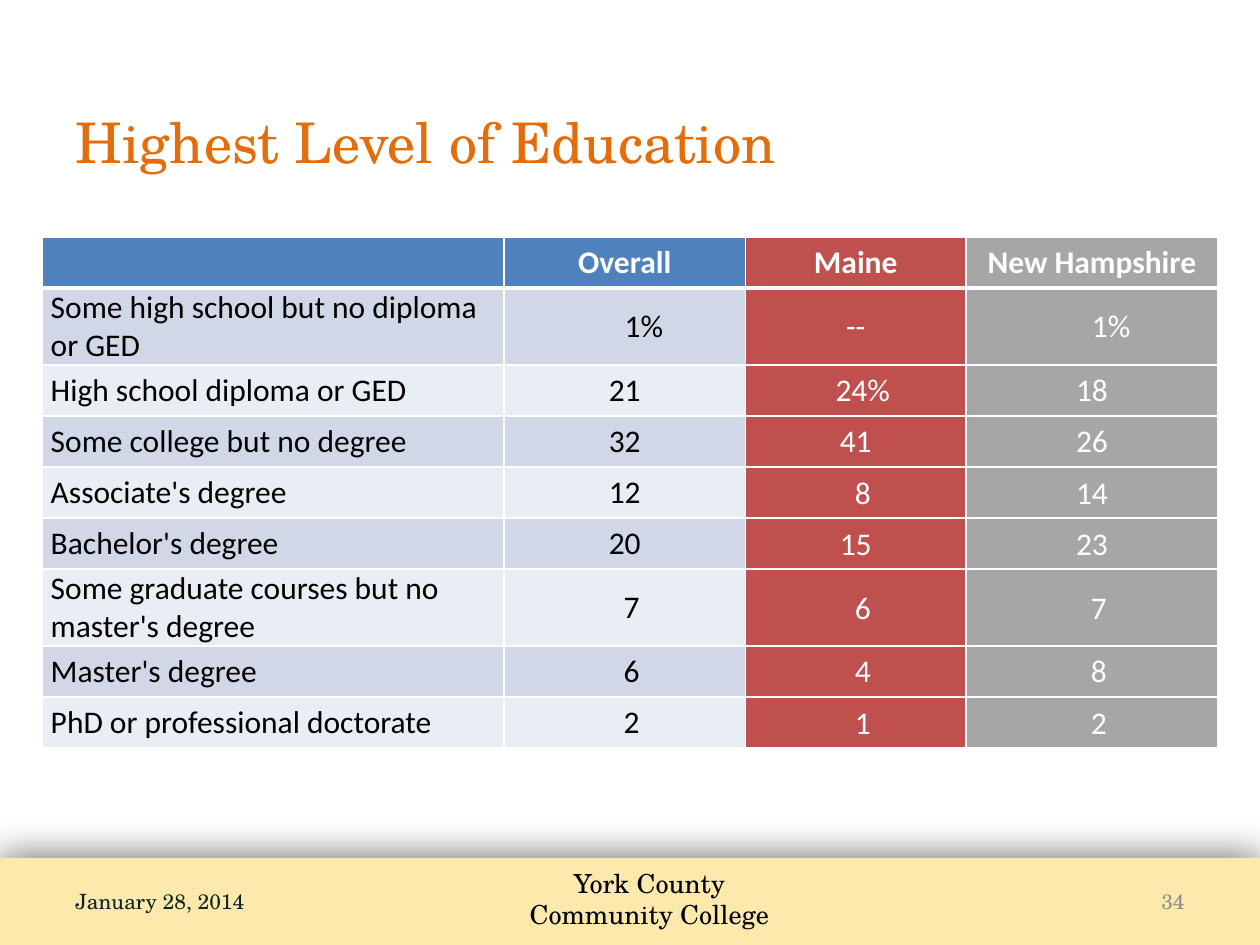
from lxml import etree
from pptx import Presentation
from pptx.dml.color import RGBColor
from pptx.enum.shapes import MSO_SHAPE
from pptx.enum.text import MSO_ANCHOR, MSO_AUTO_SIZE, PP_ALIGN
from pptx.oxml import parse_xml
from pptx.oxml.ns import nsdecls, qn
from pptx.util import Pt

LEFT, CENTER, RIGHT = PP_ALIGN.LEFT, PP_ALIGN.CENTER, PP_ALIGN.RIGHT
TOP, MIDDLE = MSO_ANCHOR.TOP, MSO_ANCHOR.MIDDLE
NO_AUTOFIT = MSO_AUTO_SIZE.NONE
RECTANGLE = MSO_SHAPE.RECTANGLE

SERIF, SANS = "TeX Gyre Schola", "Calibri"
COLORS = {
    "orange": "E46C0A", "cream": "FDE9AC", "date": "0D2322", "number": "8C8C8C",
    "blue": "4F81BD", "red": "C0504D", "gray": "A6A6A6",
    "dark band": "D0D8E8", "light band": "E9EDF4", "black": "000000", "white": "FFFFFF",
}

TITLE = "Highest Level of Education"
HEADERS = ["", "Overall", "Maine", "New Hampshire"]
HEADER_FILLS = ["blue", "blue", "red", "gray"]
EDUCATION_ROWS = [
    ("Some high school but no diploma or GED", "1%", "--", "1%"),
    ("High school diploma or GED", "21", "24%", "18"),
    ("Some college but no degree", "32", "41", "26"),
    ("Associate's degree", "12", "8", "14"),
    ("Bachelor's degree", "20", "15", "23"),
    ("Some graduate courses but no master's degree", "7", "6", "7"),
    ("Master's degree", "6", "4", "8"),
    ("PhD or professional doctorate", "2", "1", "2"),
]
COLUMN_WIDTHS = [264, 138, 126, 144]
ROW_HEIGHT, TALL_ROW_HEIGHT = 29.2, 43.9
LONGEST_SINGLE_LINE = 30
PERCENT_INDENTS = {"1%": 22, "24%": 8}
DIGIT_INDENT = 8

FOOTERS = [
    ((278.6, 491.8, 185, 44), ["York County", "Community College"], 15, "black", CENTER, TOP),
    ((36, 500.5, 180, 28.75), ["January 28, 2014"], 12, "date", LEFT, MIDDLE),
    ((516, 500.5, 168, 28.75), ["34"], 12, "number", RIGHT, MIDDLE),
]


def rgb(name):
    return RGBColor.from_string(COLORS[name])


def place(shape, left, top, width, height):
    shape.left, shape.top = Pt(left), Pt(top)
    shape.width, shape.height = Pt(width), Pt(height)


def add_text(paragraph, text, font_name, size, color, alignment, bold=False):
    paragraph.alignment = alignment
    run = paragraph.add_run()
    run.text = text
    font = run.font
    font.name, font.size, font.bold = font_name, Pt(size), bold
    font.color.rgb = rgb(color)


def add_title(slide):
    title = slide.shapes.title
    place(title, 36, 53.5, 648, 54.5)
    frame = title.text_frame
    frame.auto_size = NO_AUTOFIT
    frame.vertical_anchor = MIDDLE
    add_text(frame.paragraphs[0], TITLE, SERIF, 32, "orange", LEFT)


def add_footer(slide):
    bar = slide.shapes.add_shape(RECTANGLE, Pt(0), Pt(490.25), Pt(720), Pt(49.75))
    bar.fill.solid()
    bar.fill.fore_color.rgb = rgb("cream")
    bar.line.fill.background()
    bar.shadow.inherit = False
    effects = bar._element.spPr.find(qn("a:effectLst"))
    shadow = etree.SubElement(effects, qn("a:outerShdw"), blurRad=str(Pt(23.8)),
                              dist="0", dir="18000000", rotWithShape="0")
    shade = etree.SubElement(shadow, qn("a:srgbClr"), val=COLORS["black"])
    etree.SubElement(shade, qn("a:alpha"), val="65000")

    for position, lines, size, color, alignment, anchor in FOOTERS:
        box = slide.shapes.add_textbox(*map(Pt, position))
        frame = box.text_frame
        frame.word_wrap = True
        frame.vertical_anchor = anchor
        for index, line in enumerate(lines):
            paragraph = frame.add_paragraph() if index else frame.paragraphs[0]
            add_text(paragraph, line, SERIF, size, color, alignment)


def set_borders(cell, top_width, bottom_width):
    properties = cell._tc.get_or_add_tcPr()
    widths = {"lnL": 1, "lnR": 1, "lnT": top_width, "lnB": bottom_width}
    for index, (side, width) in enumerate(widths.items()):
        properties.insert(index, parse_xml(
            f'<a:{side} {nsdecls("a")} w="{Pt(width)}"><a:solidFill>'
            f'<a:srgbClr val="{COLORS["white"]}"/></a:solidFill></a:{side}>'))


def fill_cell(cell, row, column, text):
    is_header = row == 0
    if is_header or column >= 2:
        fill = HEADER_FILLS[column]
    else:
        fill = "dark band" if row % 2 else "light band"
    cell.fill.solid()
    cell.fill.fore_color.rgb = rgb(fill)
    set_borders(cell, 3 if row == 1 else 1, 3 if is_header else 1)

    if not is_header:
        cell.vertical_anchor = MIDDLE
        cell.margin_left = cell.margin_right = Pt(5 if column < 2 else 0.7)
        cell.margin_top = Pt(0 if column < 2 else 0.7)
        cell.margin_bottom = Pt(0)
    if not text:
        return
    paragraph = cell.text_frame.paragraphs[0]
    color = "white" if is_header or column >= 2 else "black"
    alignment = CENTER if is_header or column else LEFT
    add_text(paragraph, text, SANS, 18, color, alignment, is_header)
    indent = DIGIT_INDENT if len(text) == 1 else PERCENT_INDENTS.get(text, 0)
    if indent:
        paragraph._p.get_or_add_pPr().set("marL", str(Pt(indent)))


def add_education_table(slide):
    rows = [HEADERS, *EDUCATION_ROWS]
    heights = [TALL_ROW_HEIGHT if len(row[0]) > LONGEST_SINGLE_LINE else ROW_HEIGHT
               for row in rows]
    table = slide.shapes.add_table(
        len(rows), len(HEADERS), Pt(24), Pt(135.4),
        Pt(sum(COLUMN_WIDTHS)), Pt(sum(heights))).table
    for column, width in zip(table.columns, COLUMN_WIDTHS):
        column.width = Pt(width)
    for row_index, (row, height) in enumerate(zip(rows, heights)):
        table.rows[row_index].height = Pt(height)
        for column_index, text in enumerate(row):
            fill_cell(table.cell(row_index, column_index), row_index, column_index, text)


def main():
    presentation = Presentation()
    presentation.slide_width, presentation.slide_height = Pt(720), Pt(540)
    slide = presentation.slides.add_slide(presentation.slide_layouts[5])
    add_footer(slide)
    add_title(slide)
    add_education_table(slide)
    presentation.save("out.pptx")


if __name__ == "__main__":
    main()
